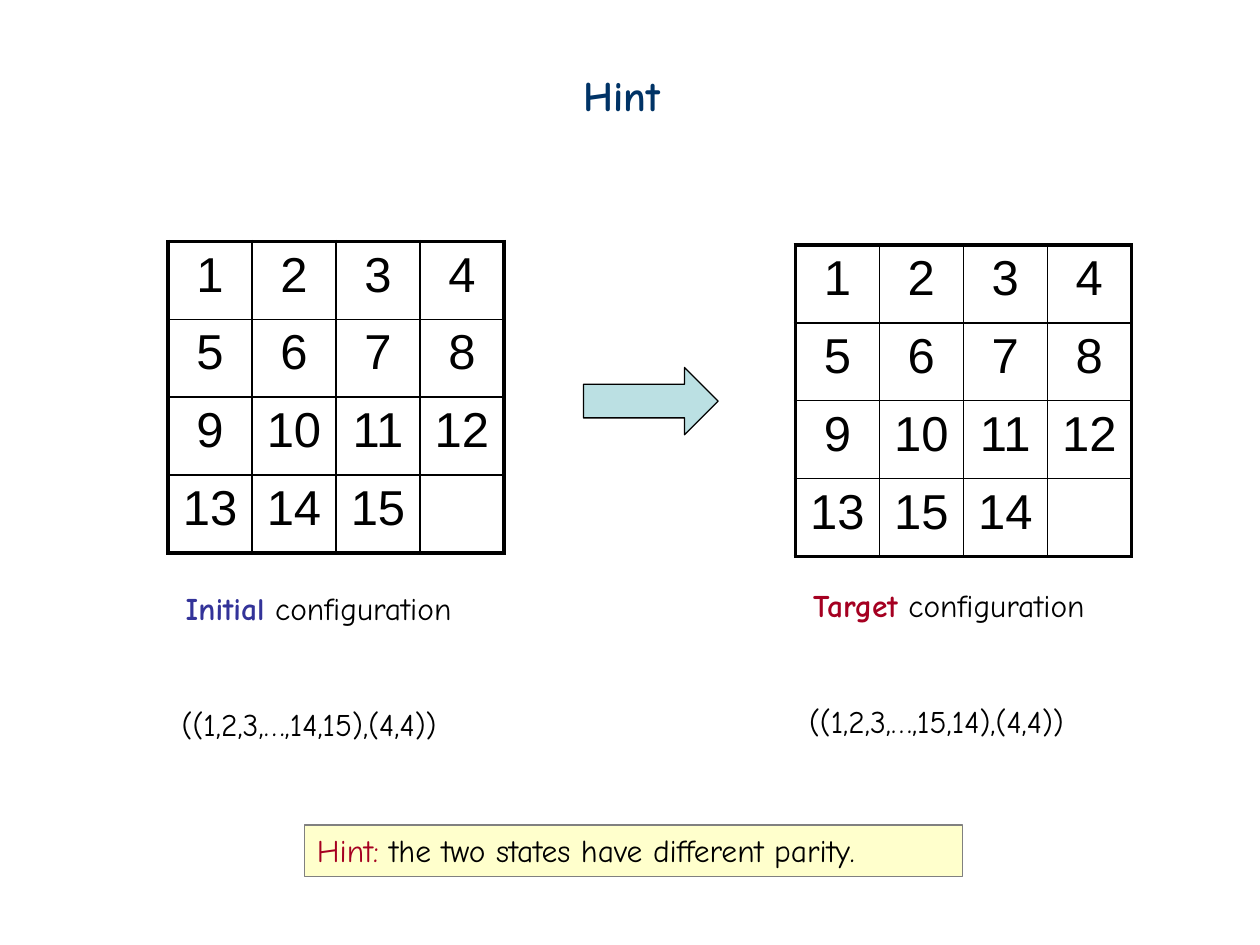
from dataclasses import dataclass

from lxml.etree import SubElement
from pptx import Presentation
from pptx.dml.color import RGBColor as Rgb
from pptx.enum.shapes import MSO_SHAPE as Shape
from pptx.enum.text import MSO_ANCHOR as Anchor, MSO_AUTO_SIZE as Fit, PP_ALIGN as Align
from pptx.oxml.ns import qn
from pptx.util import Pt


@dataclass(frozen=True)
class Theme:
    hand: str = "Comic Neue"
    sans: str = "Arial"
    black: str = "000000"
    navy: str = "003366"
    blue: str = "333399"
    red: str = "A50021"
    teal: str = "BBE0E3"
    cream: str = "FFFFCC"
    gray: str = "808080"
    head: int = 24
    body: int = 18
    tile: int = 28
    thin: float = 1
    thick: float = 2.25
    edge: float = 0.75


T = Theme()
SIDE = 4
COL, ROW = 48, 44.5


def color(hue):
    return Rgb.from_string(hue)


def write(frame, size, *runs):
    """Fill the frame with one line of (text, colour, bold) runs."""
    frame.word_wrap = True
    frame.auto_size = Fit.NONE
    frame.vertical_anchor = Anchor.TOP
    line = frame.paragraphs[0]
    line.alignment = Align.LEFT
    line.font.name, line.font.size = T.hand, Pt(size)
    for text, hue, bold in runs:
        run = line.add_run()
        run.text = text
        run.font.bold = bold
        run.font.color.rgb = color(hue)


def place(shape, x, y, w, h):
    shape.left, shape.top, shape.width, shape.height = map(Pt, (x, y, w, h))


def title(slide, x, y, w, h):
    head = slide.shapes.title
    place(head, x, y, w, h)
    write(head.text_frame, T.head, ("Hint", T.navy, True))


def label(slide, x, y, w, *runs):
    box = slide.shapes.add_textbox(Pt(x), Pt(y), Pt(w), Pt(29))
    write(box.text_frame, T.body, *runs)


def block(slide, kind, x, y, w, h, fill, edge):
    shape = slide.shapes.add_shape(kind, Pt(x), Pt(y), Pt(w), Pt(h))
    shape.shadow.inherit = False
    shape.fill.solid()
    shape.fill.fore_color.rgb = color(fill)
    shape.line.color.rgb = color(edge)
    shape.line.width = Pt(T.edge)
    return shape


def border(cell, row, col):
    """Draw thick lines on the outside of the grid and thin ones inside."""
    last = SIDE - 1
    outer = {"L": col == 0, "R": col == last, "T": row == 0, "B": row == last}
    props = cell._tc.get_or_add_tcPr()
    for at, (side, rim) in enumerate(outer.items()):
        width = Pt(T.thick if rim else T.thin)
        line = SubElement(props, qn(f"a:ln{side}"), w=str(int(width)))
        fill = SubElement(line, qn("a:solidFill"))
        SubElement(fill, qn("a:srgbClr"), val=T.black)
        props.insert(at, line)


def puzzle(slide, x, y, tiles):
    size = Pt(COL * SIDE), Pt(ROW * SIDE)
    grid = slide.shapes.add_table(SIDE, SIDE, Pt(x), Pt(y), *size).table
    grid.first_row = grid.horz_banding = False
    for at, cell in enumerate(grid.iter_cells()):
        cell.fill.background()
        border(cell, *divmod(at, SIDE))
        line = cell.text_frame.paragraphs[0]
        line.alignment = Align.CENTER
        line.font.name, line.font.size = T.sans, Pt(T.tile)
        line.font.color.rgb = color(T.black)
        if at < len(tiles):
            line.add_run().text = str(tiles[at])


def panel(slide, x, y, drop, name, hue, tiles):
    """Place a puzzle, with its caption and state starting drop below its top."""
    puzzle(slide, x, y, tiles)
    label(slide, x + 3, y + drop, 190,
          (name, hue, True), (" configuration", T.black, False))
    tail = ",".join(map(str, tiles[-2:]))
    label(slide, x + 0.75, y + drop + 66.2, 191.5,
          (f"((1,2,3,…,{tail}),(4,4))", T.black, False))


def arrow(slide, x, y, w, h):
    shape = block(slide, Shape.RIGHT_ARROW, x, y, w, h, T.teal, T.black)
    shape.adjustments[0] = shape.adjustments[1] = 0.5


def note(slide, x, y, w, h):
    bar = block(slide, Shape.RECTANGLE, x, y, w, h, T.cream, T.gray)
    write(bar.text_frame, T.body, ("Hint:", T.red, False),
          (" the two states have different parity.", T.black, False))


def main():
    deck = Presentation()
    deck.slide_width, deck.slide_height = Pt(720), Pt(540)
    slide = deck.slides.add_slide(deck.slide_layouts[5])
    start = list(range(1, 16))
    goal = start[:13] + [15, 14]
    title(slide, 326, 36, 64, 36)
    panel(slide, 96, 138, 195.2, "Initial", T.blue, start)
    panel(slide, 454.5, 140, 191.2, "Target", T.red, goal)
    arrow(slide, 333.4, 210, 77, 38.4)
    note(slide, 174, 471.4, 376, 29.6)
    deck.save("out.pptx")


if __name__ == "__main__":
    main()
